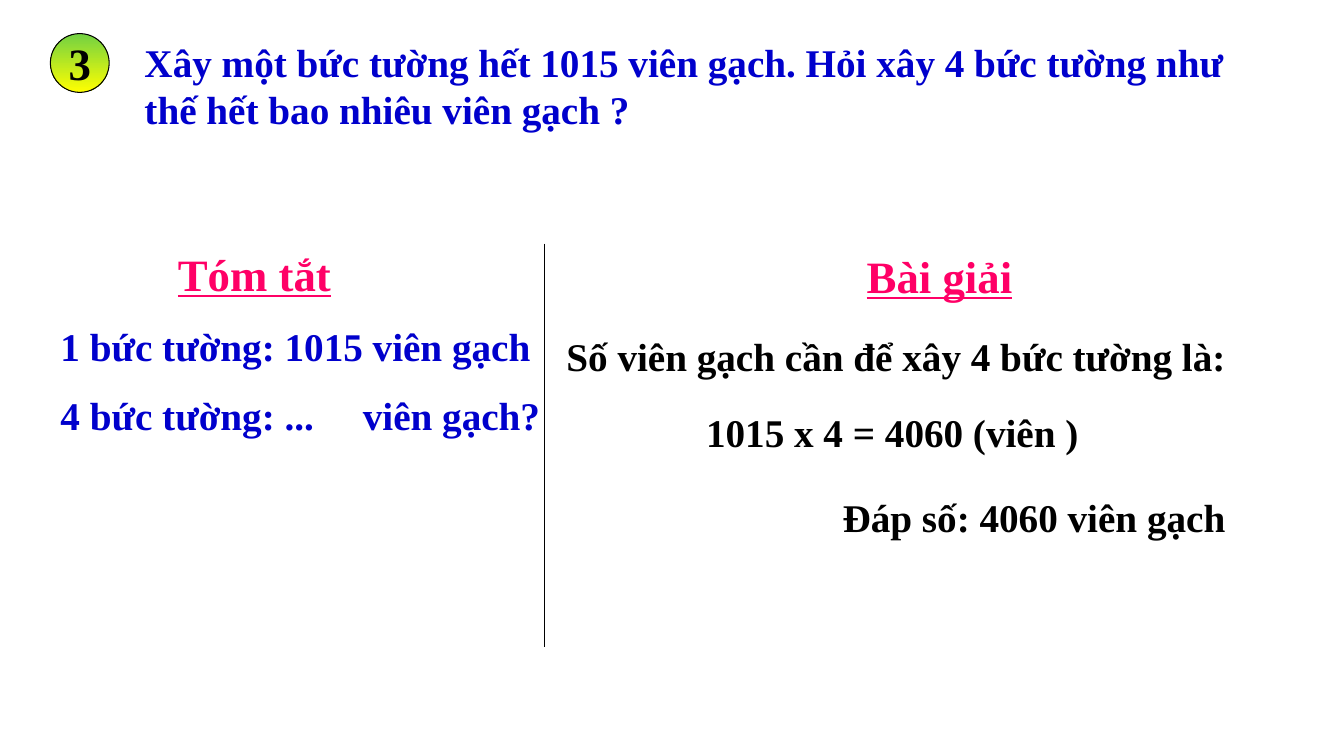
from lxml import etree
from pptx import Presentation
from pptx.dml.color import RGBColor
from pptx.enum.shapes import MSO_CONNECTOR, MSO_SHAPE
from pptx.enum.text import MSO_ANCHOR, MSO_AUTO_SIZE, PP_ALIGN
from pptx.oxml.ns import qn
from pptx.util import Emu, Pt

PX = 9525
FONT = "Times New Roman"
BLACK = RGBColor(0x00, 0x00, 0x00)
BLUE = RGBColor(0x00, 0x00, 0xCC)
PINK = RGBColor(0xFF, 0x00, 0x66)
GREEN = RGBColor(0x72, 0xD1, 0x43)
YELLOW = RGBColor(0xFF, 0xFF, 0x00)
OVAL = MSO_SHAPE.OVAL
STRAIGHT = MSO_CONNECTOR.STRAIGHT
TOP = MSO_ANCHOR.TOP
MIDDLE = MSO_ANCHOR.MIDDLE
NO_AUTOFIT = MSO_AUTO_SIZE.NONE
LEFT = PP_ALIGN.LEFT
CENTER = PP_ALIGN.CENTER
TITLE_AND_CONTENT = 1
TEXT_SIZE = 28
HEADING_SIZE = 32
SUMMARY_GAP = 16
TAB_POSITION = 288


def px(length):
    return Emu(length * PX)


def format_text(text_frame, size, color, align=LEFT, underline=None):
    for paragraph in text_frame.paragraphs:
        paragraph.alignment = align
        for run in paragraph.runs:
            font = run.font
            font.name = FONT
            font.size = Pt(size)
            font.bold = True
            font.underline = underline
            font.color.rgb = color


def fill_placeholder(placeholder, text, left, top, width, height):
    placeholder.left, placeholder.top = px(left), px(top)
    placeholder.width, placeholder.height = px(width), px(height)
    text_frame = placeholder.text_frame
    text_frame.text = text
    text_frame.word_wrap = True
    text_frame.auto_size = NO_AUTOFIT
    text_frame.vertical_anchor = TOP
    format_text(text_frame, TEXT_SIZE, BLUE)
    return text_frame


def set_summary_layout(text_frame):
    for paragraph in text_frame.paragraphs:
        paragraph.space_before = Pt(0)
        properties = paragraph._p.get_or_add_pPr()
        properties.set("marL", "0")
        properties.set("indent", "0")
        etree.SubElement(properties, qn("a:buNone"))
        tabs = etree.SubElement(properties, qn("a:tabLst"))
        etree.SubElement(tabs, qn("a:tab"), pos=str(px(TAB_POSITION)), algn="l")
    text_frame.paragraphs[-1].space_before = Pt(SUMMARY_GAP)


def add_text(slide, text, left, top, width, size=TEXT_SIZE, color=BLACK, underline=None):
    shape = slide.shapes.add_textbox(px(left), px(top), px(width), px(size * 2))
    text_frame = shape.text_frame
    text_frame.word_wrap = True
    text_frame.text = text
    format_text(text_frame, size, color, underline=underline)


def add_heading(slide, text, left, top):
    add_text(slide, text, left, top, 189, HEADING_SIZE, PINK, True)


def add_number_badge(slide, number, left, top, diameter):
    shape = slide.shapes.add_shape(OVAL, px(left), px(top), px(diameter), px(diameter))
    shape.shadow.inherit = False
    shape.fill.gradient()
    shape.fill.gradient_angle = 270
    for stop, color in zip(shape.fill.gradient_stops, (GREEN, YELLOW)):
        stop.color.rgb = color
    shape.line.color.rgb = BLACK
    shape.line.width = Pt(0.75)
    text_frame = shape.text_frame
    text_frame.text = number
    text_frame.word_wrap = False
    text_frame.vertical_anchor = MIDDLE
    format_text(text_frame, HEADING_SIZE, BLACK, CENTER)


def add_divider(slide, x, top, bottom):
    connector = slide.shapes.add_connector(STRAIGHT, px(x), px(top), px(x), px(bottom))
    connector.line.color.rgb = BLACK
    connector.line.width = Pt(0.75)
    etree.SubElement(connector._element.spPr, qn("a:effectLst"))


def main():
    presentation = Presentation()
    presentation.slide_width = px(1280)
    presentation.slide_height = px(720)
    slide = presentation.slides.add_slide(presentation.slide_layouts[TITLE_AND_CONTENT])

    add_number_badge(slide, "3", 48, 32, 56)
    fill_placeholder(
        slide.shapes.title,
        "Xây một bức tường hết 1015 viên gạch. Hỏi xây 4 bức tường như thế hết bao nhiêu viên gạch ?",
        128, 32, 1104, 99,
    )

    add_heading(slide, "Tóm tắt", 160, 230)
    summary = fill_placeholder(
        slide.placeholders[1],
        "1 bức tường: 1015 viên gạch\n4 bức tường: ...\tviên gạch?",
        48, 302, 480, 120,
    )
    set_summary_layout(summary)

    add_divider(slide, 519, 232, 616)

    add_heading(slide, "Bài giải", 816, 232)
    add_text(slide, "Số viên gạch cần để xây 4 bức tường là:", 530, 312, 741)
    add_text(slide, "1015 x 4 = 4060 (viên )", 663, 384, 608)
    add_text(slide, "Đáp số: 4060 viên gạch", 793, 465, 487)

    presentation.save("out.pptx")


if __name__ == "__main__":
    main()
